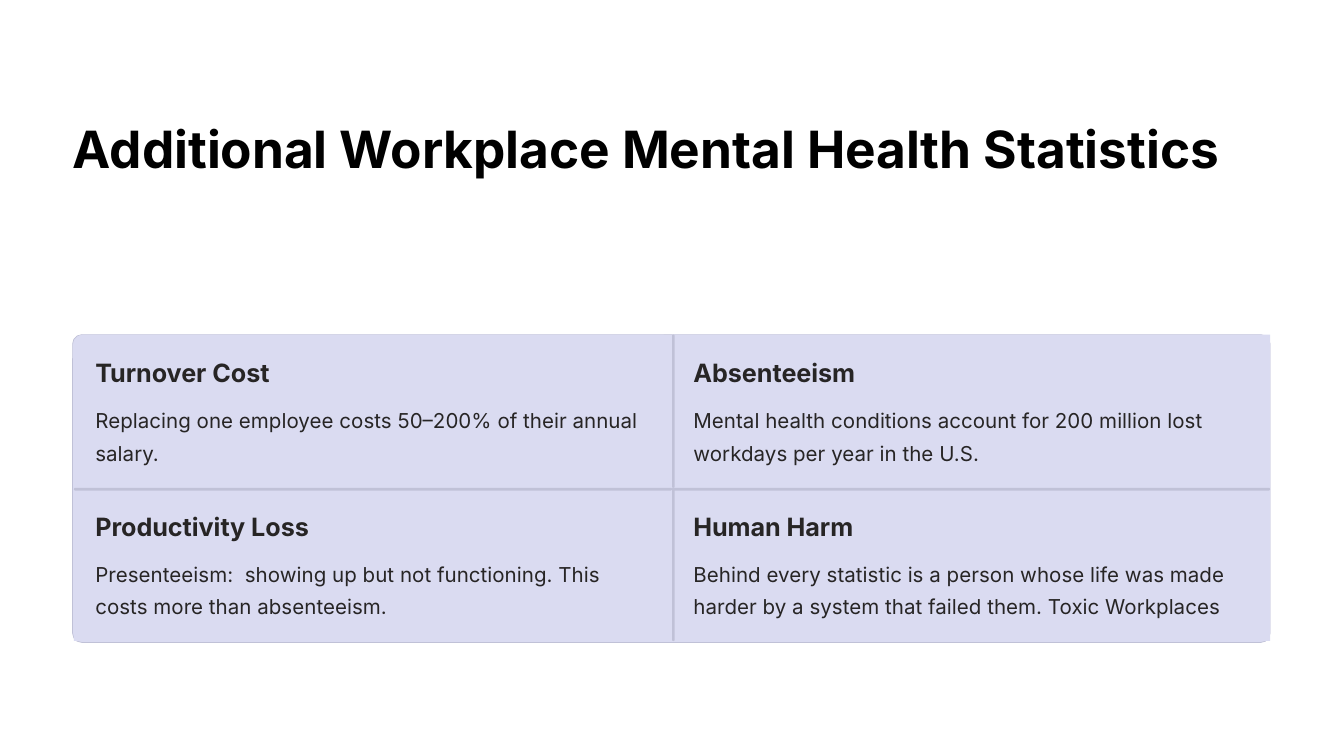
import pptx
import pptx.dml.color
import pptx.enum.shapes
import pptx.enum.text
import pptx.util
from pptx.util import Inches

FONT = "Inter"
BLACK, WHITE, INK = "000000", "FFFFFF", "272525"
PANEL, RULE = "DADBF1", "C0C1D7"

GRID_LEFT, GRID_TOP = 0.55, 2.49
CELL_WIDTH, CELL_HEIGHT = 4.45, 1.14
RULE_WIDTH = 0.02
PADDING = 0.16

STATISTICS = [
    ("Turnover Cost",
     "Replacing one employee costs 50–200% of their annual salary."),
    ("Absenteeism",
     "Mental health conditions account for 200 million lost workdays per year in the U.S."),
    ("Productivity Loss",
     "Presenteeism:  showing up but not functioning. This costs more than absenteeism."),
    ("Human Harm",
     "Behind every statistic is a person whose life was made harder by a system "
     "that failed them. Toxic Workplaces"),
]


def color(hex_string):
    return pptx.dml.color.RGBColor.from_string(hex_string)


def place(shape, left, top, width, height):
    shape.left, shape.top = Inches(left), Inches(top)
    shape.width, shape.height = Inches(width), Inches(height)


def write_text(shape, text, size, line_height, hex_string, bold=False, wrap=True):
    """Fill a text shape with one left-aligned paragraph and no insets."""
    frame = shape.text_frame
    frame.text = text
    frame.word_wrap = wrap
    frame.auto_size = pptx.enum.text.MSO_AUTO_SIZE.NONE
    frame.vertical_anchor = pptx.enum.text.MSO_ANCHOR.TOP
    frame.margin_left = frame.margin_right = 0
    frame.margin_top = frame.margin_bottom = 0
    para = frame.paragraphs[0]
    para.alignment = pptx.enum.text.PP_ALIGN.LEFT
    para.line_spacing = pptx.util.Pt(line_height)
    para.space_before = pptx.util.Pt(0)
    font = para.runs[0].font
    font.name, font.size, font.bold = FONT, pptx.util.Pt(size), bold
    font.color.rgb = color(hex_string)


def add_text(slide, left, top, width, height, *args, **options):
    box = slide.shapes.add_textbox(
        Inches(left), Inches(top), Inches(width), Inches(height))
    write_text(box, *args, **options)


def add_block(slide, left, top, width, height, fill, rounding=None, line=None):
    """Add a filled rectangle, with rounded corners if rounding is given."""
    kinds = pptx.enum.shapes.MSO_SHAPE
    kind = kinds.RECTANGLE if rounding is None else kinds.ROUNDED_RECTANGLE
    block = slide.shapes.add_shape(
        kind, Inches(left), Inches(top), Inches(width), Inches(height))
    if rounding is not None:
        block.adjustments[0] = rounding
    block.shadow.inherit = False
    block.fill.solid()
    block.fill.fore_color.rgb = color(fill)
    if line:
        block.line.color.rgb = color(line)
        block.line.width = pptx.util.Pt(0.38)
    else:
        block.line.fill.background()


def add_cell(slide, row, column, heading, body):
    left = GRID_LEFT + column * CELL_WIDTH
    top = GRID_TOP + row * CELL_HEIGHT
    rounding = 0.06 if row == column == 0 else None
    add_block(slide, left, top, CELL_WIDTH, CELL_HEIGHT, PANEL, rounding)
    if column:
        add_block(slide, left, top, RULE_WIDTH, CELL_HEIGHT, RULE, 0.5)
    if row:
        add_block(slide, left, top, CELL_WIDTH, RULE_WIDTH, RULE, 0.5)
    text_left = left + PADDING
    add_text(slide, text_left, top + 0.16, 1.94, 0.24,
             heading, 13.5, 17, INK, bold=True, wrap=False)
    add_text(slide, text_left, top + 0.49, 4.14, 0.5, body, 11, 17.5, INK)


def main():
    deck = pptx.Presentation()
    deck.slide_width = Inches(10)
    deck.slide_height = deck.slide_width * 9 // 16
    slide = deck.slides.add_slide(deck.slide_layouts.get_by_name("Title Only"))
    slide.background.fill.solid()
    slide.background.fill.fore_color.rgb = color(WHITE)

    title = slide.shapes.title
    place(title, 0.54, 0.85, 8.67, 0.48)
    write_text(title, "Additional Workplace Mental Health Statistics",
               27.5, 34.5, BLACK, bold=True, wrap=False)

    add_block(slide, 0.54, GRID_TOP, 8.91, 2.29, PANEL, 0.03, RULE)
    for index, (heading, body) in enumerate(STATISTICS):
        row, column = divmod(index, 2)
        add_cell(slide, row, column, heading, body)

    deck.save("out.pptx")


if __name__ == "__main__":
    main()
